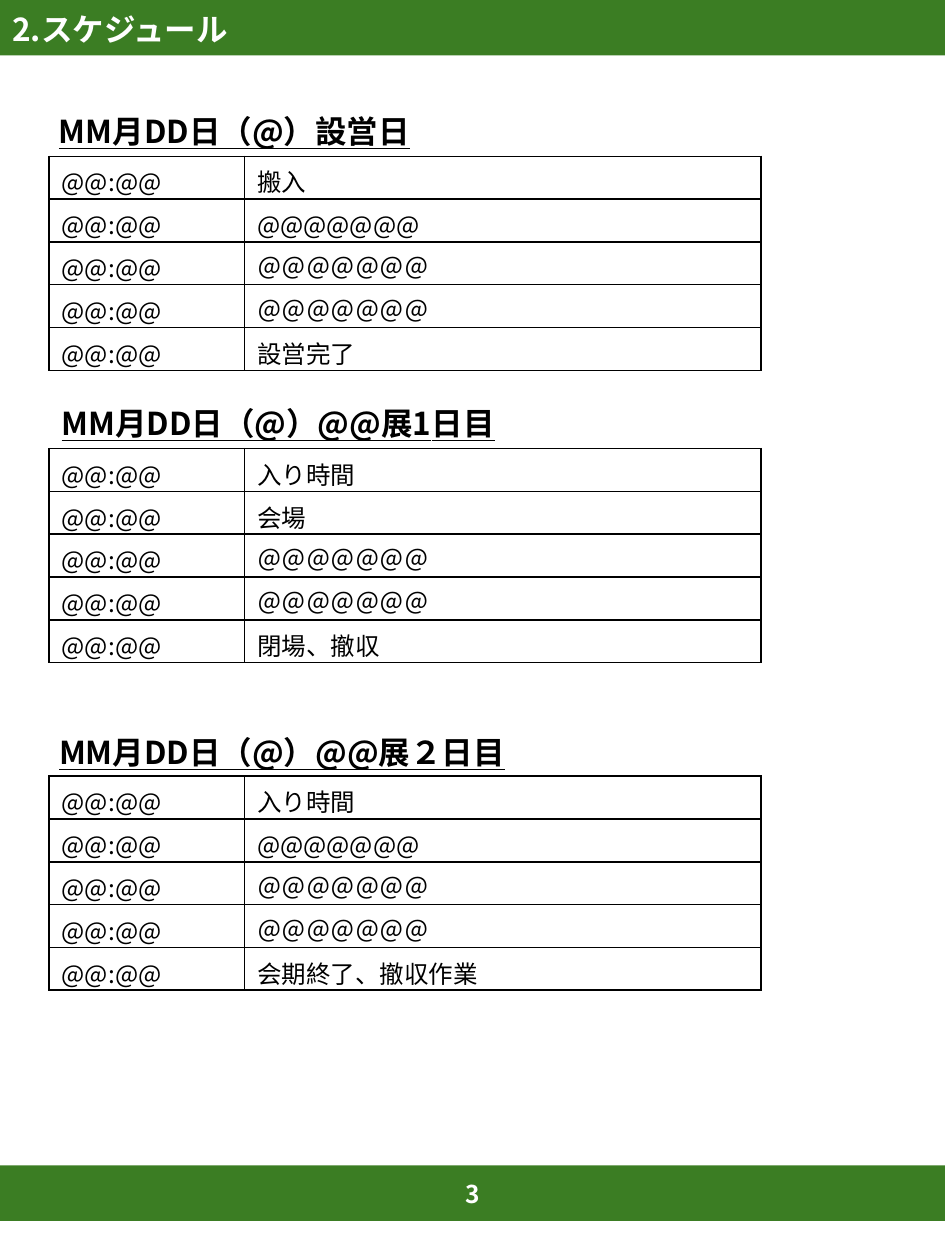
"""Build the schedule slide: green bands, three dated headings and their timetables."""
from lxml.etree import SubElement
from pptx import Presentation
from pptx.dml.color import RGBColor
from pptx.enum.shapes import MSO_SHAPE
from pptx.enum.text import MSO_ANCHOR, PP_ALIGN
from pptx.oxml import parse_xml
from pptx.oxml.ns import nsdecls, qn
from pptx.util import Inches, Pt

FONT = "Noto Sans CJK JP"


def rgb(value):
    return RGBColor.from_string(value)


def write(tf, text, size, color, bold=False, underline=False):
    p = tf.paragraphs[0]
    r = p.add_run()
    r.text = text
    p.font.size, p.font.name = Pt(size), FONT
    p.font.bold, p.font.underline = bold, underline
    p.font.color.rgb = rgb(color)
    SubElement(r._r.get_or_add_rPr(), qn("a:ea"), typeface=FONT)
    return p


prs = Presentation()
prs.slide_width, prs.slide_height = Inches(7.5), Inches(10)
s = prs.slides.add_slide(prs.slide_layouts[6])

for top in (9.25, 0):
    sp = s.shapes.add_shape(MSO_SHAPE.RECTANGLE, 0, Inches(top), Inches(7.5), Inches(0.44))
    sp.shadow.inherit = False
    sp.fill.solid()
    sp.fill.fore_color.rgb = rgb("3B7D23")
    sp.line.fill.background()

labels = [
    ("2.スケジュール", 0, 0.03, 2.33, 0.4, 18, "FFFFFF", False),
    ("MM月DD日（@）設営日", 0.37, 0.84, 3.53, 0.4, 18, "000000", True),
    ("MM月DD日（@）@@展1日目", 0.39, 3.16, 5.95, 0.4, 18, "000000", True),
    ("MM月DD日（@）@@展２日目", 0.37, 5.77, 5.95, 0.4, 18, "000000", True),
    ("3", 3.6, 9.3, 0.3, 0.34, 14, "FFFFFF", False),
]
for text, left, top, width, height, size, color, underline in labels:
    sp = s.shapes.add_textbox(Inches(left), Inches(top), Inches(width), Inches(height))
    tf = sp.text_frame
    tf.word_wrap = True
    tf.vertical_anchor = MSO_ANCHOR.MIDDLE
    p = write(tf, text, size, color, True, underline)
    if text == "3":
        p.alignment = PP_ALIGN.CENTER
        tf.margin_left = tf.margin_right = 0

half, full = "@" * 7, "＠" * 7
timetables = [
    (1.24, ["搬入", half, full, full, "設営完了"]),
    (3.56, ["入り時間", "会場", full, full, "閉場、撤収"]),
    (6.16, ["入り時間", half, full, full, "会期終了、撤収作業"]),
]
for top, events in timetables:
    table = s.shapes.add_table(
        len(events), 2, Inches(0.39), Inches(top), Inches(5.65), Inches(1.69)
    ).table
    table.first_row = table.horz_banding = False
    table.columns[0].width, table.columns[1].width = Inches(1.55), Inches(4.1)
    for row, event in zip(table.rows, events):
        row.height = Inches(0.34)
        for cell, text in zip(row.cells, ("@@:@@", event)):
            cell.margin_top = cell.margin_bottom = 0
            cell.vertical_anchor = MSO_ANCHOR.BOTTOM
            write(cell.text_frame, text, 14, "000000")
            tcPr = cell._tc.get_or_add_tcPr()
            for side in "LRTB":
                tcPr.append(parse_xml(
                    f'<a:ln{side} w="12700" {nsdecls("a")}><a:solidFill>'
                    f'<a:srgbClr val="000000"/></a:solidFill></a:ln{side}>'
                ))
            cell.fill.solid()
            cell.fill.fore_color.rgb = rgb("FFFFFF")

prs.save("out.pptx")
